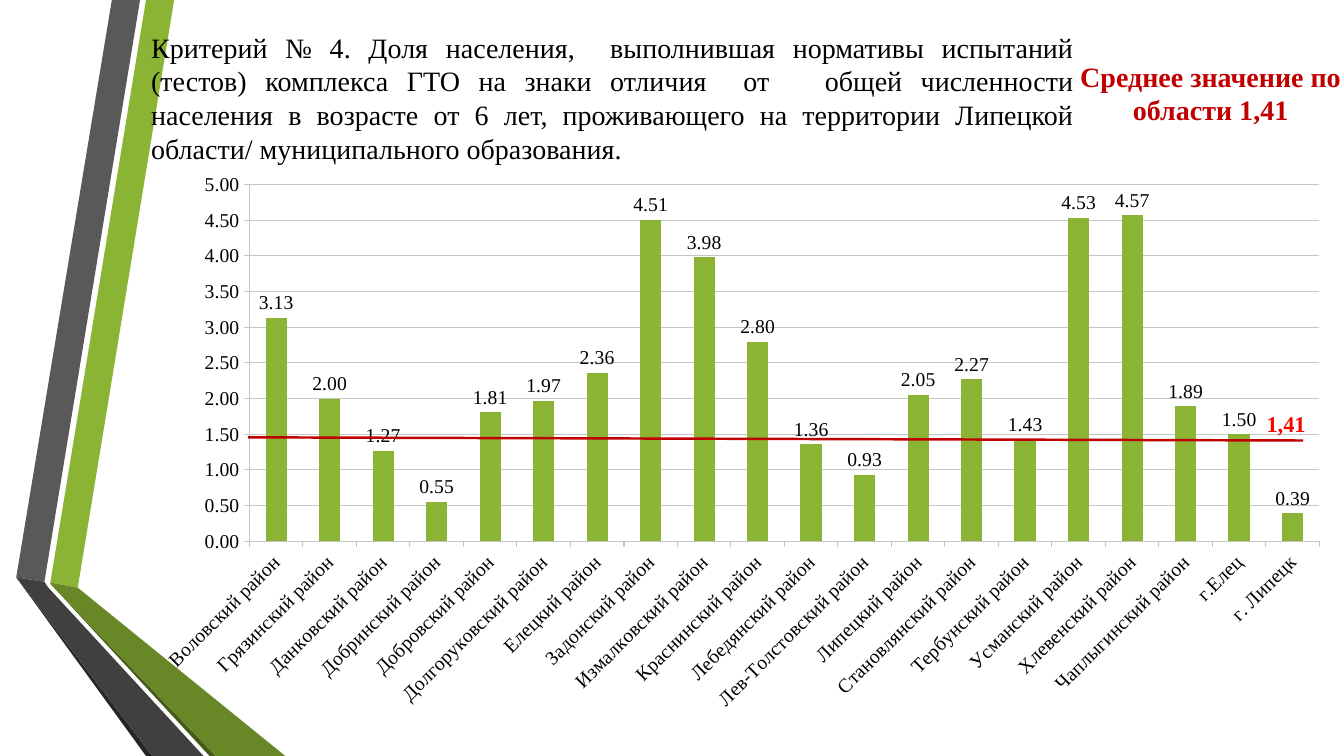
"""Builds the slide on the share of residents who passed the fitness standards."""
from lxml import etree
from pptx import Presentation
from pptx import util as u
from pptx.chart import data as chart_data
from pptx.dml import color
from pptx.enum import chart as ch, shapes, text
from pptx.oxml import ns

FONT = "Times New Roman"
BLACK, RED, DARK_RED, GREEN, GRID = "000000", "FF0000", "C00000", "8BB434", "C5C5C5"

RIBBONS = [
    (GREEN, [(1.27, 14.68), (1.96, 14.81), (4.39, 0), (3.68, 0)]),
    ("595959", [(3.53, 0), (2.82, 0), (0.41, 14.55), (1.12, 14.66)]),
    ("262626", [(0.41, 14.55), (3.68, 19.05), (3.84, 19.05)]),
    ("465A1A", [(1.27, 14.71), (5.28, 19.05), (5.44, 19.05)]),
    ("688727", [(1.27, 14.71), (5.44, 19.05), (7.19, 19.05), (1.96, 14.81), (1.27, 14.68)]),
    ("404040", [(5.13, 19.05), (1.22, 14.81), (1.12, 14.66), (0.41, 14.55), (3.84, 19.05)]),
]
TITLE = ("Критерий № 4. Доля населения,  выполнившая нормативы испытаний (тестов) "
         "комплекса ГТО на знаки отличия  от   общей численности населения в возрасте "
         "от 6 лет, проживающего на территории Липецкой области/ муниципального образования.")
AVERAGE_NOTE = "Среднее значение по области 1,41"
AVERAGE = "1,41"
SHARES = {
    "Воловский район": 3.13, "Грязинский район": 2, "Данковский район": 1.27,
    "Добринский район": 0.55, "Добровский район": 1.81, "Долгоруковский район": 1.97,
    "Елецкий район": 2.36, "Задонский район": 4.51, "Измалковский район": 3.98,
    "Краснинский район": 2.8, "Лебедянский район": 1.36, "Лев-Толстовский район": 0.93,
    "Липецкий район": 2.05, "Становлянский район": 2.27, "Тербунский район": 1.43,
    "Усманский район": 4.53, "Хлевенский район": 4.57, "Чаплыгинский район": 1.89,
    "г.Елец": 1.5, "г. Липецк": 0.39,
}
CHART_BOX = (3.56, 4.09, 30.3, 14.05)
PLOT_LAYOUT = {"x": 0.09, "y": 0.04, "w": 0.89, "h": 0.64}
AVERAGE_LINE = (6.25, 11.02, 32.84, 11.1)


def rgb(value):
    return color.RGBColor.from_string(value)


def cm(values):
    return [u.Cm(value) for value in values]


def style_font(font, size, colour, bold=False):
    font.name, font.size, font.bold = FONT, u.Pt(size), bold
    font.color.rgb = rgb(colour)


def style_line(line, colour, width):
    line.color.rgb = rgb(colour)
    line.width = u.Pt(width)


def add_ribbon(slide, colour, points):
    start, *rest = [cm(point) for point in points]
    builder = slide.shapes.build_freeform(*start)
    builder.add_line_segments(rest, close=True)
    shape = builder.convert_to_shape()
    shape.shadow.inherit = False
    shape.fill.solid()
    shape.fill.fore_color.rgb = rgb(colour)
    shape.line.fill.background()


def add_text(slide, box, wording, size, colour, align, bold=False):
    frame = slide.shapes.add_textbox(*cm(box)).text_frame
    frame.word_wrap = True
    paragraph = frame.paragraphs[0]
    paragraph.text = wording
    paragraph.alignment = align
    style_font(paragraph.runs[0].font, size, colour, bold)


def add_share_chart(slide):
    data = chart_data.CategoryChartData(number_format="0.00")
    data.categories = list(SHARES)
    data.add_series("Series 1", list(SHARES.values()))
    chart = slide.shapes.add_chart(ch.XL_CHART_TYPE.COLUMN_CLUSTERED, *cm(CHART_BOX), data).chart
    chart.has_legend = chart.has_title = False
    style_font(chart.font, 14, BLACK)
    for axis in (chart.category_axis, chart.value_axis):
        style_font(axis.tick_labels.font, 14, BLACK)
        style_line(axis.format.line, GRID, 0.75)
        axis.major_tick_mark = ch.XL_TICK_MARK.OUTSIDE
    label_body = chart.category_axis.tick_labels.font._element.getparent().getparent().find(ns.qn("a:bodyPr"))
    if label_body is None:
        label_body = chart.category_axis._element.find(".//" + ns.qn("a:bodyPr"))
    label_body.set("rot", "-2700000")
    values = chart.value_axis
    values.minimum_scale, values.maximum_scale, values.major_unit = 0, 5, 0.5
    values.tick_labels.number_format = "0.00"
    values.tick_labels.number_format_is_linked = False
    style_line(values.major_gridlines.format.line, GRID, 0.75)

    plot = chart.plots[0]
    plot.gap_width, plot.vary_by_categories, plot.has_data_labels = 150, False, True
    labels = plot.data_labels
    labels.show_value, labels.number_format = True, "0.00"
    labels.number_format_is_linked = False
    labels.position = ch.XL_LABEL_POSITION.OUTSIDE_END
    style_font(labels.font, 14, BLACK)
    fill = plot.series[0].format.fill
    fill.solid()
    fill.fore_color.rgb = rgb(GREEN)

    plot_area = chart._chartSpace.chart.plotArea
    for old_layout in plot_area.findall(ns.qn("c:layout")):
        plot_area.remove(old_layout)
    layout = etree.Element(ns.qn("c:layout"))
    plot_area.insert(0, layout)
    manual = etree.SubElement(layout, ns.qn("c:manualLayout"))
    settings = {"layoutTarget": "inner", "xMode": "edge", "yMode": "edge", **PLOT_LAYOUT}
    for name, value in settings.items():
        etree.SubElement(manual, ns.qn("c:" + name)).set("val", str(value))


def add_average_line(slide):
    line = slide.shapes.add_connector(shapes.MSO_CONNECTOR.STRAIGHT, *cm(AVERAGE_LINE))
    style_line(line.line, DARK_RED, 1.75)
    etree.SubElement(line._element.spPr, ns.qn("a:effectLst"))


def main():
    presentation = Presentation()
    presentation.slide_width, presentation.slide_height = cm((33.87, 19.05))
    slide = presentation.slides.add_slide(presentation.slide_layouts[6])
    for colour, points in RIBBONS:
        add_ribbon(slide, colour, points)
    add_text(slide, (3.56, 0.64, 23.75, 3.68), TITLE, 20, BLACK, text.PP_ALIGN.JUSTIFY)
    add_text(slide, (26.85, 1.37, 7.32, 1.96), AVERAGE_NOTE, 20, DARK_RED,
             text.PP_ALIGN.CENTER, bold=True)
    add_share_chart(slide)
    add_average_line(slide)
    add_text(slide, (31.67, 10.21, 1.7, 0.89), AVERAGE, 16, RED, text.PP_ALIGN.LEFT, bold=True)
    presentation.save("out.pptx")


if __name__ == "__main__":
    main()
